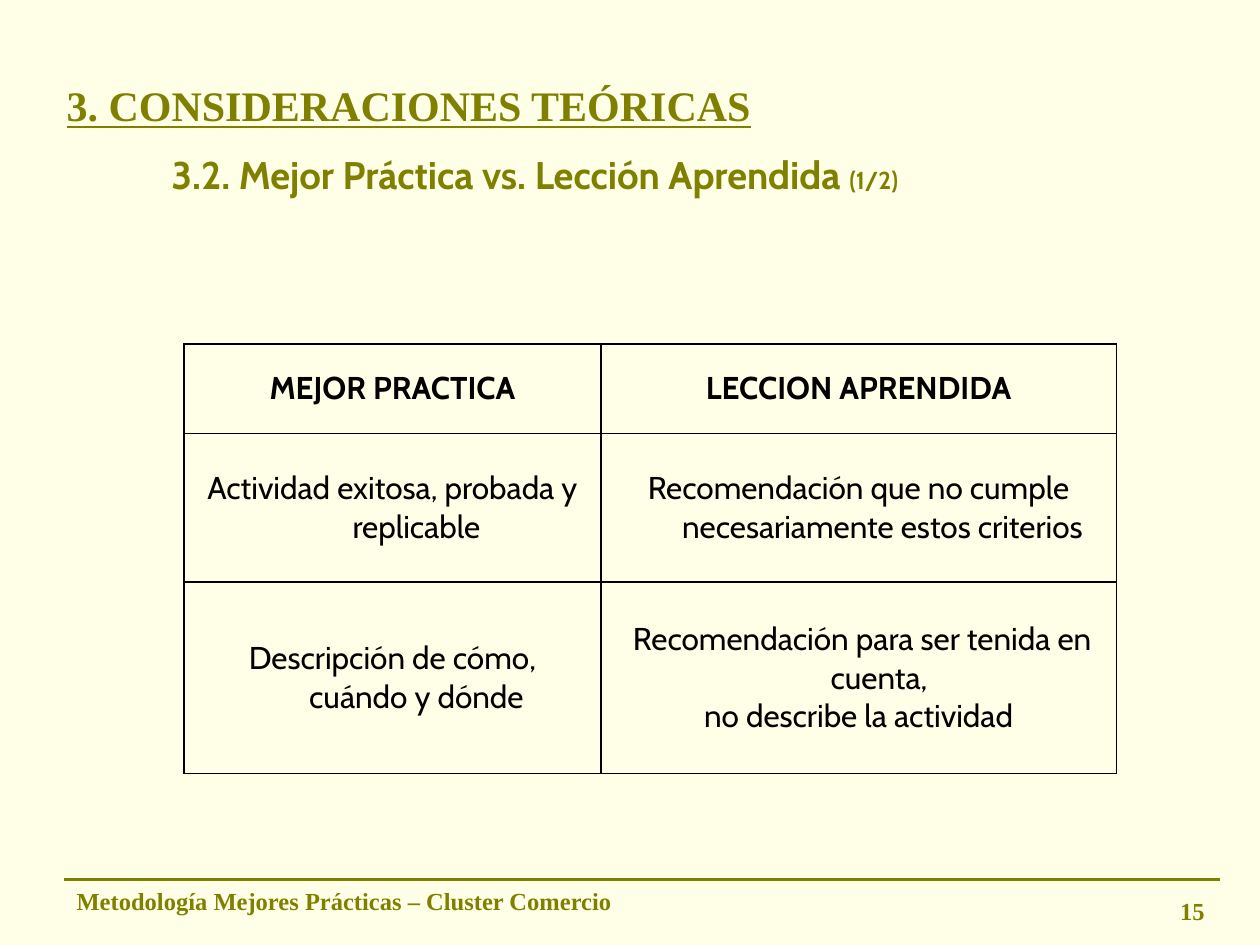
from dataclasses import dataclass

from lxml import etree
from pptx import Presentation
from pptx import util as u
from pptx.dml.color import RGBColor
from pptx.enum import shapes, text
from pptx.oxml import ns


@dataclass(frozen=True)
class Theme:
    """Colours, fonts and type sizes of the slide."""
    background: RGBColor = RGBColor(0xFF, 0xFE, 0xE6)
    olive: RGBColor = RGBColor(0x80, 0x80, 0x00)
    ink: RGBColor = RGBColor(0, 0, 0)
    serif: str = "Times New Roman"
    sans: str = "Cabin"
    title: int = 24
    subtitle: int = 22
    table: int = 18
    small: int = 14


THEME = Theme()
ROWS = [
    ["MEJOR PRACTICA", "LECCION APRENDIDA"],
    ["Actividad exitosa, probada y replicable",
     "Recomendación que no cumple necesariamente estos criterios"],
    ["Descripción de cómo, cuándo y dónde",
     " Recomendación para ser tenida en cuenta, \nno describe la actividad"],
]


def style_run(run, font, size, color, bold=True):
    """Format one run."""
    run.font.name = font
    run.font.size = u.Pt(size)
    run.font.color.rgb = color
    run.font.bold = bold


def add_text(slide, box, pieces, font, align=text.PP_ALIGN.LEFT, wrap=True):
    """Add a one-paragraph olive text box made of (words, size) pieces."""
    shape = slide.shapes.add_textbox(*map(u.Inches, box))
    shape.text_frame.word_wrap = wrap
    paragraph = shape.text_frame.paragraphs[0]
    paragraph.alignment = align
    for words, size in pieces:
        run = paragraph.add_run()
        run.text = words
        style_run(run, font, size, THEME.olive)
    return shape


def add_heading(slide, left, top):
    """Place the underlined title and the subtitle below it."""
    title = add_text(slide, (left, top, 8.58, 0.63),
                     [("3. CONSIDERACIONES TEÓRICAS", THEME.title)], THEME.serif)
    title.text_frame.vertical_anchor = text.MSO_ANCHOR.MIDDLE
    title.text_frame.paragraphs[0].runs[0].font.underline = True
    subtitle = add_text(slide, (left + 0.24, top + 0.63, 7.15, 0.47),
                        [("3.2. Mejor Práctica vs. Lección Aprendida ", THEME.subtitle),
                         ("(1/2)", THEME.small)],
                        THEME.sans, text.PP_ALIGN.CENTER, wrap=False)
    subtitle.text_frame.auto_size = text.MSO_AUTO_SIZE.SHAPE_TO_FIT_TEXT


def add_borders(cell):
    """Draw a thin line on the four sides of a cell."""
    properties = cell._tc.get_or_add_tcPr()
    for index, side in enumerate(("lnL", "lnR", "lnT", "lnB")):
        line = etree.Element(ns.qn(f"a:{side}"), w=str(u.Pt(1)))
        fill = etree.SubElement(line, ns.qn("a:solidFill"))
        etree.SubElement(fill, ns.qn("a:srgbClr"), val=str(THEME.ink))
        properties.insert(index, line)


def fill_cell(cell, words, bold):
    """Write centred text with a hanging indent into a bordered cell."""
    cell.fill.background()
    cell.vertical_anchor = text.MSO_ANCHOR.MIDDLE
    cell.text_frame.text = words
    for paragraph in cell.text_frame.paragraphs:
        paragraph.alignment = text.PP_ALIGN.CENTER
        properties = paragraph._p.get_or_add_pPr()
        properties.set("marL", str(u.Inches(0.38)))
        properties.set("indent", str(u.Inches(-0.38)))
        for run in paragraph.runs:
            style_run(run, THEME.sans, THEME.table, THEME.ink, bold)
    add_borders(cell)


def add_comparison(slide, left, top, widths, heights):
    """Place the comparison table with a bold first row."""
    frame = slide.shapes.add_table(len(heights), len(widths), u.Inches(left), u.Inches(top),
                                   u.Inches(sum(widths)), u.Inches(sum(heights)))
    table = frame.table
    table.first_row = table.horz_banding = False
    for column, width in zip(table.columns, widths):
        column.width = u.Inches(width)
    for row, height, entries in zip(table.rows, heights, ROWS):
        row.height = u.Inches(height)
        for cell, words in zip(row.cells, entries):
            fill_cell(cell, words, bold=entries is ROWS[0])


def add_footer(slide, left, top, width):
    """Place the rule, the document name and the page number."""
    rule = slide.shapes.add_connector(shapes.MSO_CONNECTOR.STRAIGHT, u.Inches(left),
                                      u.Inches(top), u.Inches(left + width), u.Inches(top))
    rule.line.color.rgb = THEME.olive
    rule.line.width = u.Pt(2.25)
    etree.SubElement(rule._element.spPr, ns.qn("a:effectLst"))
    add_text(slide, (left, top, 4.8, 0.34),
             [("Metodología Mejores Prácticas – Cluster Comercio", THEME.small)], THEME.serif)
    add_text(slide, (left + width - 2.1, top + 0.08, 2.08, 0.36),
             [("15", THEME.small)], THEME.serif, text.PP_ALIGN.RIGHT)


def main():
    """Build and save the slide."""
    presentation = Presentation()
    presentation.slide_width, presentation.slide_height = u.Inches(10), u.Inches(7.5)
    slide = presentation.slides.add_slide(presentation.slide_layouts[6])
    slide.background.fill.solid()
    slide.background.fill.fore_color.rgb = THEME.background
    add_footer(slide, 0.51, 6.98, 9.17)
    add_heading(slide, 0.43, 0.52)
    add_comparison(slide, 1.46, 2.73, (3.31, 4.09), (0.71, 1.18, 1.52))
    presentation.save("out.pptx")


if __name__ == "__main__":
    main()
